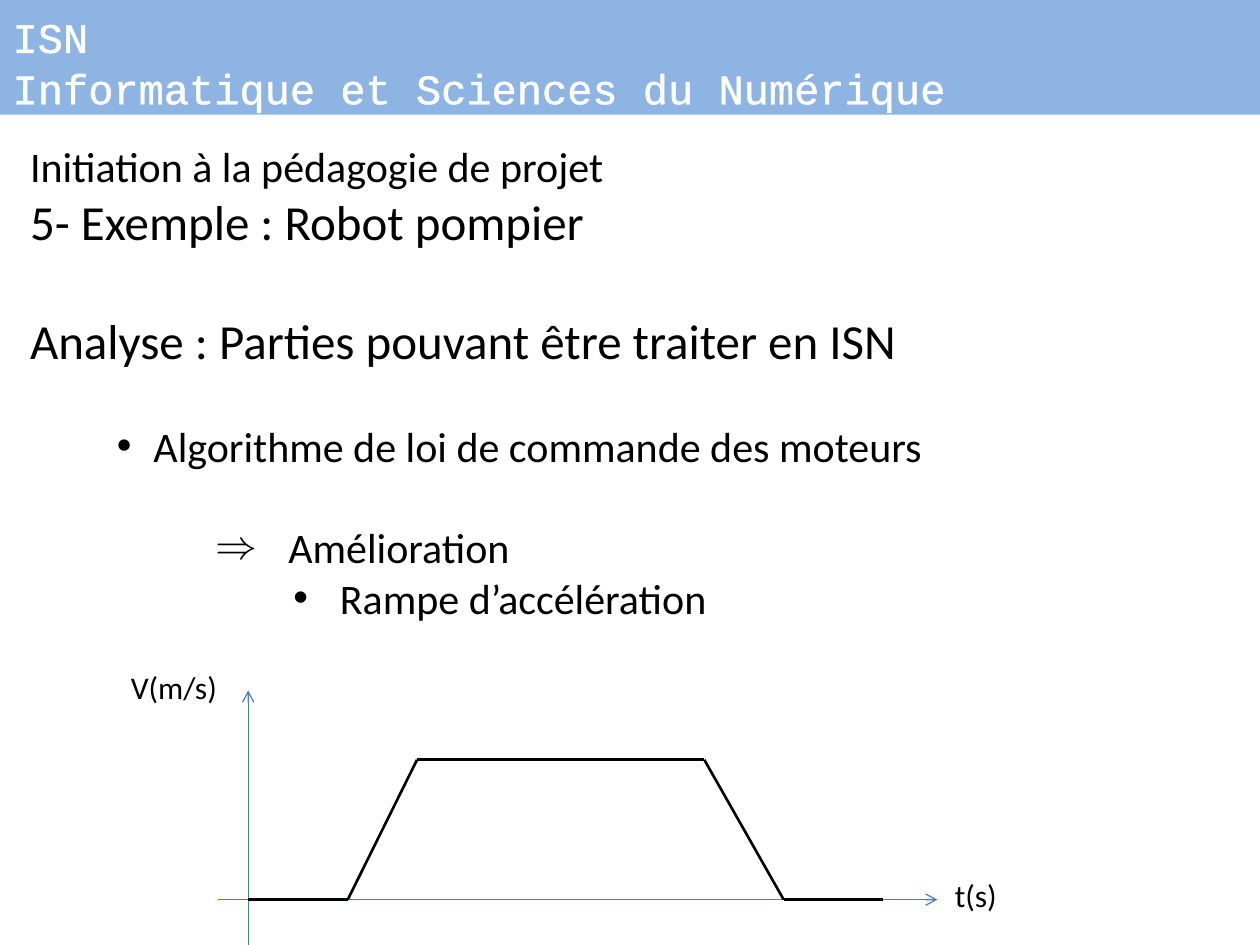
from itertools import pairwise

from lxml import etree
from pptx import Presentation
from pptx.dml.color import RGBColor
from pptx.enum.shapes import MSO_CONNECTOR
from pptx.enum.text import MSO_ANCHOR, MSO_AUTO_SIZE, PP_ALIGN
from pptx.oxml.ns import qn
from pptx.util import Inches, Pt

STRAIGHT = MSO_CONNECTOR.STRAIGHT
TOP, LEFT = MSO_ANCHOR.TOP, PP_ALIGN.LEFT
NO_FIT = MSO_AUTO_SIZE.NONE

# Content
WIDTH, HEIGHT = 10, 7.5
COLORS = {"band": "8EB4E3", "white": "FFFFFF", "text": "000000", "axis": "4B7EBC"}
HEADER = ["ISN", "Informatique et Sciences du Numérique"]
# text, size, space before (points), left margin, hanging indent, bullet
OUTLINE = [
    ("Initiation à la pédagogie de projet", 24, 0, 0, 0, None),
    ("5- Exemple : Robot pompier", 28, 0, 0, 0, None),
    ("Analyse : Parties pouvant être traiter en ISN", 28, 34.2, 0, 0, None),
    ("Algorithme de loi de commande des moteurs", 24, 29.3, 0.98, 0.29, "•"),
    ("Amélioration", 24, 29.3, 2.05, 0.58, "⇒"),
    ("Rampe d’accélération", 24, 0, 2.46, 0.37, "•"),
]
BULLET_FONTS = {"•": "Arial", "⇒": "Cambria Math"}
ORIGIN_X, BASE_Y, PLATEAU_Y = 1.97, 7.14, 6.03
AXES = [
    ((ORIGIN_X, HEIGHT), (ORIGIN_X, 5.48)),
    ((1.73, BASE_Y), (7.44, BASE_Y)),
]
AXIS_LABELS = [("V(m/s)", 0.94, 5.25, 0.89), ("t(s)", 7.48, 6.9, 0.54)]
SPEED_PROFILE = [
    (ORIGIN_X, BASE_Y), (2.76, BASE_Y), (3.31, PLATEAU_Y),
    (5.59, PLATEAU_Y), (6.22, BASE_Y), (7.01, BASE_Y),
]


def rgb(name):
    return RGBColor.from_string(COLORS[name])


def add_span(para, text, size, font="Calibri", color="text"):
    span = para.add_run()
    span.text = text
    span.font.size = Pt(size)
    span.font.name = font
    span.font.color.rgb = rgb(color)
    return span


def outline_span(span, color, width):
    """Draw the letters with a contour line."""
    line = etree.Element(qn("a:ln"), w=str(Pt(width)))
    fill = etree.SubElement(line, qn("a:solidFill"))
    etree.SubElement(fill, qn("a:srgbClr"), val=COLORS[color])
    span.font._element.insert(0, line)


def set_bullet(para, margin, hanging, symbol):
    properties = para._p.get_or_add_pPr()
    properties.set("marL", str(Inches(margin)))
    properties.set("indent", str(-Inches(hanging)))
    etree.SubElement(properties, qn("a:buFont"), typeface=BULLET_FONTS[symbol])
    etree.SubElement(properties, qn("a:buChar"), char=symbol)


def add_text_box(slide, left, top, width, height, wrap):
    box = slide.shapes.add_textbox(*map(Inches, (left, top, width, height)))
    box.text_frame.word_wrap = wrap
    return box.text_frame


def add_line(slide, start, end, color, width, arrow=False):
    line = slide.shapes.add_connector(STRAIGHT, *map(Inches, start + end))
    line.line.color.rgb = rgb(color)
    line.line.width = Pt(width)
    if arrow:
        etree.SubElement(line.line._get_or_add_ln(), qn("a:tailEnd"), type="arrow")
    etree.SubElement(line._element.spPr, qn("a:effectLst"))


def paragraphs(frame, count):
    return [frame.paragraphs[0]] + [frame.add_paragraph() for _ in range(count - 1)]


def main():
    deck = Presentation()
    deck.slide_width, deck.slide_height = Inches(WIDTH), Inches(HEIGHT)
    page = deck.slides.add_slide(deck.slide_layouts[5])

    # Header band
    title = page.shapes.title
    title.left, title.top = 0, 0
    title.width, title.height = Inches(WIDTH), Inches(0.91)
    title.fill.solid()
    title.fill.fore_color.rgb = rgb("band")
    frame = title.text_frame
    frame.auto_size, frame.word_wrap, frame.vertical_anchor = NO_FIT, True, TOP
    frame.margin_top = Inches(0.08)
    for para, text in zip(paragraphs(frame, len(HEADER)), HEADER):
        para.alignment = LEFT
        para.line_spacing = Pt(29.3)
        outline_span(add_span(para, text, 24, "Courier New", "white"), "white", 1.45)

    # Outline text
    frame = add_text_box(page, 0.14, 1.07, WIDTH - 0.14, HEIGHT - 1.07, True)
    for para, item in zip(paragraphs(frame, len(OUTLINE)), OUTLINE):
        text, size, gap, margin, hanging, symbol = item
        para.space_before = Pt(gap)
        if symbol:
            set_bullet(para, margin, hanging, symbol)
        add_span(para, text, size)

    # Speed against time
    for start, end in AXES:
        add_line(page, start, end, "axis", 0.75, arrow=True)
    for text, left, top, width in AXIS_LABELS:
        frame = add_text_box(page, left, top, width, 0.4, False)
        add_span(frame.paragraphs[0], text, 18)
    for start, end in pairwise(SPEED_PROFILE):
        add_line(page, start, end, "text", 1.5)

    deck.save("out.pptx")


if __name__ == "__main__":
    main()
